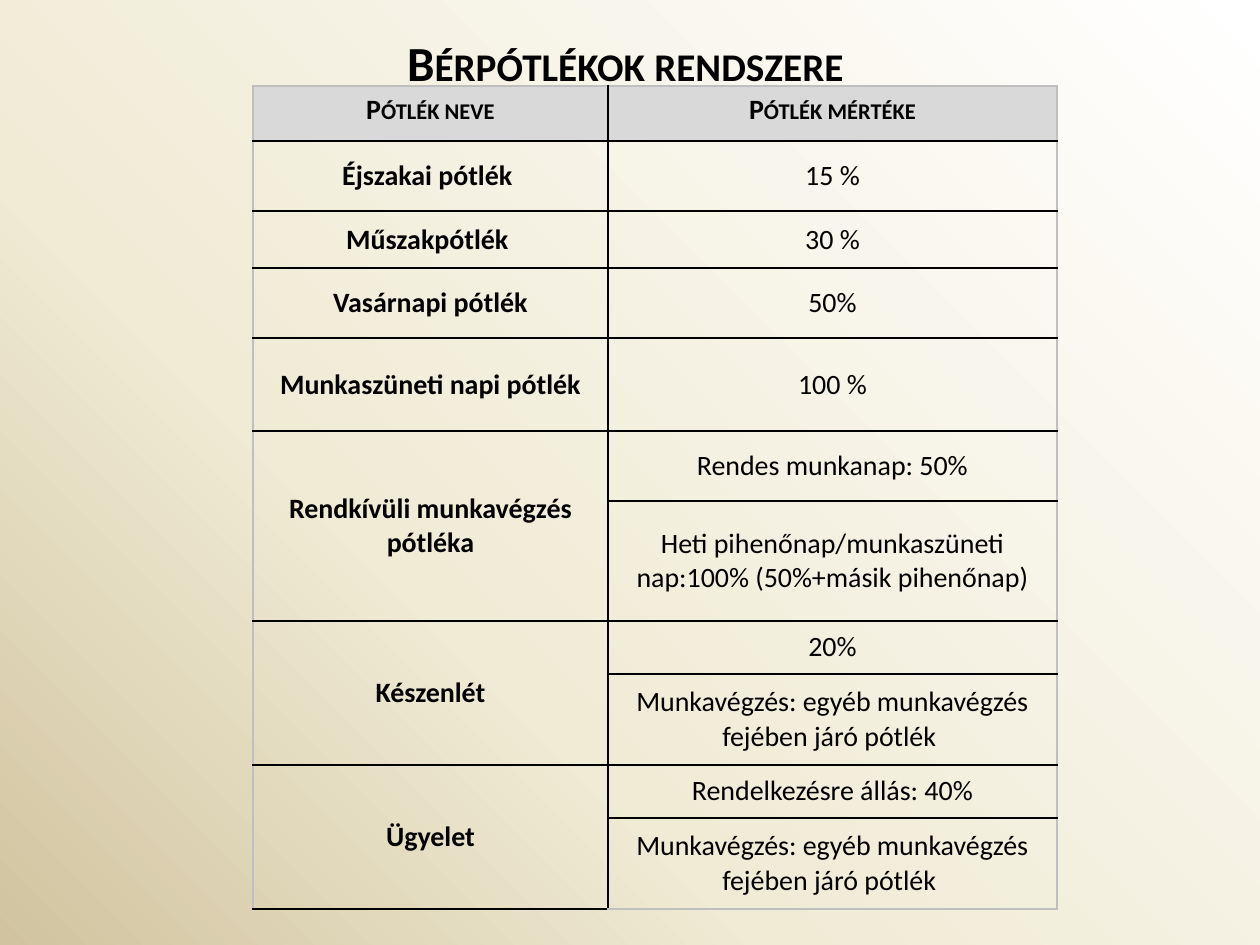
"""Builds a slide with a table of Hungarian wage supplements."""
from lxml import etree
from pptx import Presentation, util as u
from pptx.dml.color import RGBColor
from pptx.enum import text
from pptx.oxml.ns import qn

TITLE = "Bérpótlékok rendszere "
HEADER = ("Pótlék neve", "Pótlék mértéke")
WORK = "Munkavégzés: egyéb munkavégzés fejében járó pótlék "
SUPPLEMENTS = [
    ("Éjszakai pótlék ", [("15 %", 70)]),
    ("Műszakpótlék ", [("30 %", 57)]),
    ("Vasárnapi pótlék", [("50%", 70)]),
    ("Munkaszüneti napi pótlék", [("100 %", 93)]),
    ("Rendkívüli munkavégzés pótléka", [
        ("Rendes munkanap: 50%", 70),
        ("Heti pihenőnap/munkaszüneti nap:100% (50%+másik pihenőnap)", 120)]),
    ("Készenlét", [("20%", 53), (WORK, 91)]),
    ("Ügyelet", [("Rendelkezésre állás: 40%", 53), (WORK, 91)]),
]
COLS = (355, 449)
HEADER_H = 55
LEFT, TOP = 253, 86

BLACK = RGBColor(0x00, 0x00, 0x00)
GREY = RGBColor(0xBF, 0xBF, 0xBF)
HEADER_FILL = RGBColor(0xD9, 0xD9, 0xD9)
GRADIENT = [(0, RGBColor(0xFF, 0xFF, 0xFF)), (65, RGBColor(0xF0, 0xEB, 0xD5)),
            (100, RGBColor(0xD1, 0xC3, 0x9F))]


def px(n):
    return u.Emu(round(n * 914400 / 126))


def add_color(parent, color):
    etree.SubElement(parent, qn("a:srgbClr"), val=str(color))


def write(tf, words, size=16, bold=False, small_caps=False):
    p = tf.paragraphs[0]
    p.alignment = text.PP_ALIGN.CENTER
    r = p.add_run()
    r.text = words
    r.font.name, r.font.size, r.font.bold = "Calibri", u.Pt(size), bold
    r.font.color.rgb = BLACK
    if small_caps:
        r.font._element.set("cap", "small")


def set_background(s):
    fill = s.background.fill
    fill.gradient()
    fill.gradient_angle = 225
    stops = s.background._cSld.find(".//" + qn("a:gsLst"))
    for stop in list(stops):
        stops.remove(stop)
    for pos, color in GRADIENT:
        add_color(etree.SubElement(stops, qn("a:gs"), pos=str(pos * 1000)), color)


def set_borders(cell, outer):
    tcPr = cell._tc.get_or_add_tcPr()
    for i, side in enumerate("LRTB"):
        ln = etree.Element(qn("a:ln" + side), w=str(u.Pt(1)))
        add_color(etree.SubElement(ln, qn("a:solidFill")), GREY if side in outer else BLACK)
        tcPr.insert(i, ln)


def add_supplement_table(s):
    heights = [HEADER_H] + [h for _, rates in SUPPLEMENTS for _, h in rates]
    last = len(heights) - 1
    table = s.shapes.add_table(len(heights), 2, px(LEFT), px(TOP),
                               px(sum(COLS)), px(sum(heights))).table
    table.first_row = table.horz_banding = False
    for col, w in zip(table.columns, COLS):
        col.width = px(w)
    for row, h in zip(table.rows, heights):
        row.height = px(h)
    for i, row in enumerate(table.rows):
        for j, cell in enumerate(row.cells):
            if i == 0:
                cell.fill.solid()
                cell.fill.fore_color.rgb = HEADER_FILL
                write(cell.text_frame, HEADER[j], bold=True, small_caps=True)
            else:
                cell.fill.background()
                cell.vertical_anchor = text.MSO_ANCHOR.MIDDLE
            set_borders(cell, "LR"[j] + "T" * (i == 0) + "B" * (i == last))
    i = 1
    for name, rates in SUPPLEMENTS:
        write(table.cell(i, 0).text_frame, name, bold=True)
        if len(rates) > 1:
            table.cell(i, 0).merge(table.cell(i + len(rates) - 1, 0))
        for rate, _ in rates:
            write(table.cell(i, 1).text_frame, rate)
            i += 1


def main():
    prs = Presentation()
    prs.slide_width, prs.slide_height = px(1260), px(945)
    s = prs.slides.add_slide(prs.slide_layouts[5])
    set_background(s)
    title = s.shapes.title
    title.left, title.top, title.width, title.height = map(px, (63, 38, 1134, 48))
    title.text_frame.vertical_anchor = text.MSO_ANCHOR.MIDDLE
    write(title.text_frame, TITLE, size=28, bold=True, small_caps=True)
    add_supplement_table(s)
    prs.save("out.pptx")


if __name__ == "__main__":
    main()
